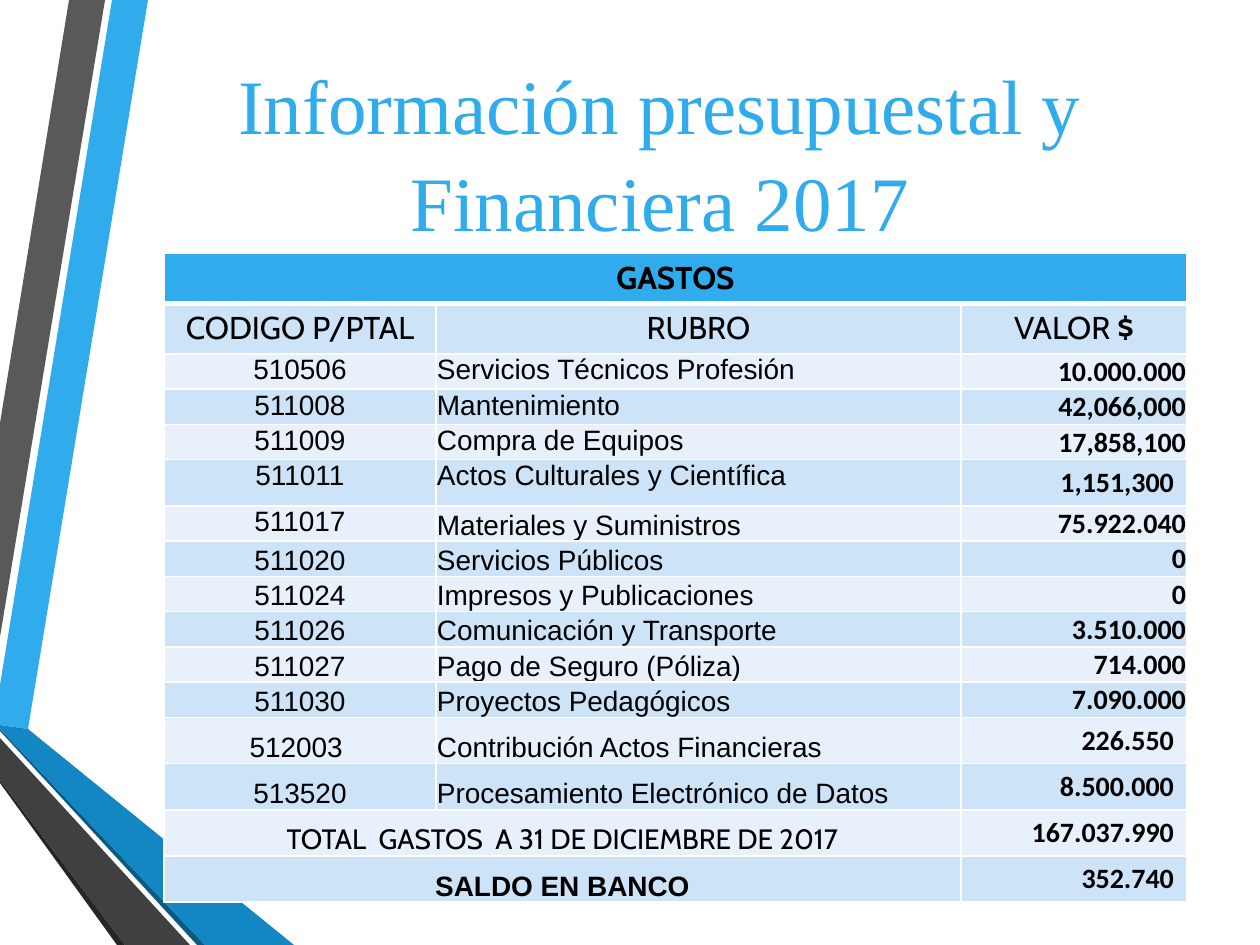
from dataclasses import dataclass

from lxml.etree import SubElement
from pptx import Presentation
from pptx.dml.color import RGBColor
from pptx.enum.text import MSO_ANCHOR, PP_ALIGN
from pptx.oxml.ns import qn
from pptx.util import Emu, Pt

SCALE = 914400 / 126  # EMU in one px
TOP, MIDDLE, BOTTOM = MSO_ANCHOR.TOP, MSO_ANCHOR.MIDDLE, MSO_ANCHOR.BOTTOM
LEFT, CENTER, RIGHT, JUSTIFY = PP_ALIGN.LEFT, PP_ALIGN.CENTER, PP_ALIGN.RIGHT, PP_ALIGN.JUSTIFY
TIGHT = (1, 1, 1, 0)
ROOMY = (13, 6, 13, 6)


@dataclass(frozen=True)
class Theme:
    accent: str = "30ACEC"
    accent_dark: str = "1287C3"
    accent_deep: str = "0C5A82"
    gray: str = "595959"
    gray_dark: str = "404040"
    gray_deep: str = "262626"
    band_dark: str = "CDE3F8"
    band_light: str = "E8F1FB"
    text: str = "000000"
    rule: str = "FFFFFF"
    title_font: str = "Times New Roman"
    heading_font: str = "Cabin"
    label_font: str = "Arial"
    value_font: str = "Calibri"
    title_size: int = 44
    heading_size: int = 18
    body_size: int = 16


THEME = Theme()

# Ribbon outlines, from back to front, relative to the page corner
RIBBONS = [
    (THEME.accent, [(0, 685), (0, 725), (28, 729), (148, 0), (112, 0)]),
    (THEME.gray, [(105, 0), (69, 0), (0, 423), (0, 637)]),
    (THEME.gray_deep, [(0, 780), (0, 783), (117, 945), (125, 945)]),
    (THEME.accent_deep, [(0, 729), (0, 731), (197, 945), (205, 945)]),
    (THEME.accent_dark, [(0, 729), (205, 945), (294, 945), (28, 729), (0, 725)]),
    (THEME.gray_dark, [(0, 780), (125, 945), (190, 945), (0, 738)]),
]

COLUMNS = [272, 525, 226]
HEADINGS = ["CODIGO P/PTAL", "RUBRO", "VALOR "]

# Code, item, value, value anchor (None marks a tall row with roomy margins)
EXPENSES = [
    ("510506", "Servicios Técnicos Profesión ", "10.000.000", BOTTOM),
    ("511008", "Mantenimiento", "42,066,000", BOTTOM),
    ("511009", "Compra de Equipos", "17,858,100", BOTTOM),
    ("511011", "Actos Culturales y Científica", "1,151,300", None),
    ("511017", "Materiales y Suministros", "75.922.040", BOTTOM),
    ("511020", "Servicios Públicos", "0", MIDDLE),
    ("511024", "Impresos y Publicaciones", "0", MIDDLE),
    ("511026", "Comunicación y Transporte", "3.510.000", MIDDLE),
    ("511027", "Pago de Seguro (Póliza)", "714.000", BOTTOM),
    ("511030", "Proyectos Pedagógicos", "7.090.000", BOTTOM),
    ("512003 ", "Contribución Actos Financieras", "226.550", None),
    ("513520", "Procesamiento Electrónico de Datos", "8.500.000", None),
]
TOP_CODES, TOP_ITEMS = 5, 4  # leading rows whose text hangs from the top

# Label, value, label font, bold label
TOTALS = [
    ("TOTAL  GASTOS  A 31 DE DICIEMBRE DE 2017", "167.037.990", THEME.heading_font, False),
    ("SALDO EN BANCO", "352.740", THEME.label_font, True),
]


def px(length):
    return Emu(round(length * SCALE))


def write_text(para, text, *, font, size, color=THEME.text, bold=False, align=LEFT):
    para.alignment = align
    span = para.add_run()
    span.text = text
    span.font.name, span.font.size, span.font.bold = font, Pt(size), bold
    span.font.color.rgb = RGBColor.from_string(color)


def draw_borders(cell, bottom=1):
    properties = cell._tc.get_or_add_tcPr()
    for position, (side, width) in enumerate([("L", 1), ("R", 1), ("T", 1), ("B", bottom)]):
        line = SubElement(properties, qn(f"a:ln{side}"), w=str(Pt(width)))
        fill = SubElement(line, qn("a:solidFill"))
        SubElement(fill, qn("a:srgbClr"), val=THEME.rule)
        properties.insert(position, line)  # borders precede the fill


def fill_cell(cell, text, *, fill, margins=ROOMY, anchor=TOP, bottom=1, **text_format):
    cell.fill.solid()
    cell.fill.fore_color.rgb = RGBColor.from_string(fill)
    (cell.margin_left, cell.margin_top,
     cell.margin_right, cell.margin_bottom) = map(px, margins)
    cell.vertical_anchor = anchor
    draw_borders(cell, bottom)
    write_text(cell.text_frame.paragraphs[0], text, **text_format)


def add_ribbons(page, left, top):
    group = page.shapes.add_group_shape()
    for color, points in RIBBONS:
        corners = [(left + x, top + y) for x, y in points]
        builder = group.shapes.build_freeform(*corners[0], scale=SCALE)
        builder.add_line_segments(corners[1:], close=True)
        ribbon = builder.convert_to_shape()
        ribbon.shadow.inherit = False
        ribbon.fill.solid()
        ribbon.fill.fore_color.rgb = RGBColor.from_string(color)
        ribbon.line.fill.background()


def add_title(page, left, top, width, height):
    box = page.shapes.title
    box.left, box.top, box.width, box.height = map(px, (left, top, width, height))
    frame = box.text_frame
    frame.word_wrap = True
    frame.vertical_anchor = MIDDLE
    para = frame.paragraphs[0]
    para.line_spacing = 1.05
    write_text(para, "Información presupuestal y Financiera 2017", font=THEME.title_font,
               size=THEME.title_size, color=THEME.accent, align=CENTER)


def add_value(cell, text, fill, anchor):
    fill_cell(cell, text, fill=fill, margins=TIGHT if anchor else ROOMY, anchor=anchor or TOP,
              font=THEME.value_font, size=THEME.body_size, bold=True, align=RIGHT)


def add_expense_table(page, left, top):
    values = [anchor for *_, anchor in EXPENSES] + [None] * len(TOTALS)
    heights = [45, 45] + [32 if anchor else 42 for anchor in values]
    box = page.shapes.add_table(len(heights), len(COLUMNS), px(left), px(top),
                                px(sum(COLUMNS)), px(sum(heights)))
    table = box.table
    for column, width in zip(table.columns, COLUMNS):
        column.width = px(width)
    for row, height in zip(table.rows, heights):
        row.height = px(height)

    # Heading rows
    heading = dict(font=THEME.heading_font, size=THEME.heading_size, align=CENTER)
    table.cell(0, 0).merge(table.cell(0, 2))
    fill_cell(table.cell(0, 0), "GASTOS", fill=THEME.accent, bottom=3, bold=True, **heading)
    for index, text in enumerate(HEADINGS):
        fill_cell(table.cell(1, index), text, fill=THEME.band_dark, **heading)
    write_text(table.cell(1, 2).text_frame.paragraphs[0], "$", bold=True, **heading)

    # Expense rows
    bands = [THEME.band_light, THEME.band_dark]
    for index, (code, item, value, anchor) in enumerate(EXPENSES):
        cells = table.rows[index + 2].cells
        fill = bands[index % 2]
        label = dict(fill=fill, margins=TIGHT, font=THEME.label_font, size=THEME.body_size)
        fill_cell(cells[0], code, anchor=TOP if index < TOP_CODES else BOTTOM,
                  align=CENTER, **label)
        high = index < TOP_ITEMS
        fill_cell(cells[1], item, anchor=TOP if high else BOTTOM,
                  align=JUSTIFY if high else LEFT, **label)
        add_value(cells[2], value, fill, anchor)

    # Total rows
    for index, (text, value, font, bold) in enumerate(TOTALS):
        cells = table.rows[index + 2 + len(EXPENSES)].cells
        cells[0].merge(cells[1])
        fill_cell(cells[0], text, fill=bands[index % 2], margins=TIGHT, anchor=BOTTOM,
                  font=font, size=THEME.body_size, bold=bold, align=CENTER)
        add_value(cells[2], value, bands[index % 2], None)


def main():
    deck = Presentation()
    deck.slide_width, deck.slide_height = px(1260), px(945)
    page = deck.slides.add_slide(deck.slide_layouts[5])
    add_ribbons(page, 0, 0)
    add_expense_table(page, 164, 253)
    add_title(page, 164, 55, 992, 189)
    deck.save("out.pptx")


if __name__ == "__main__":
    main()
